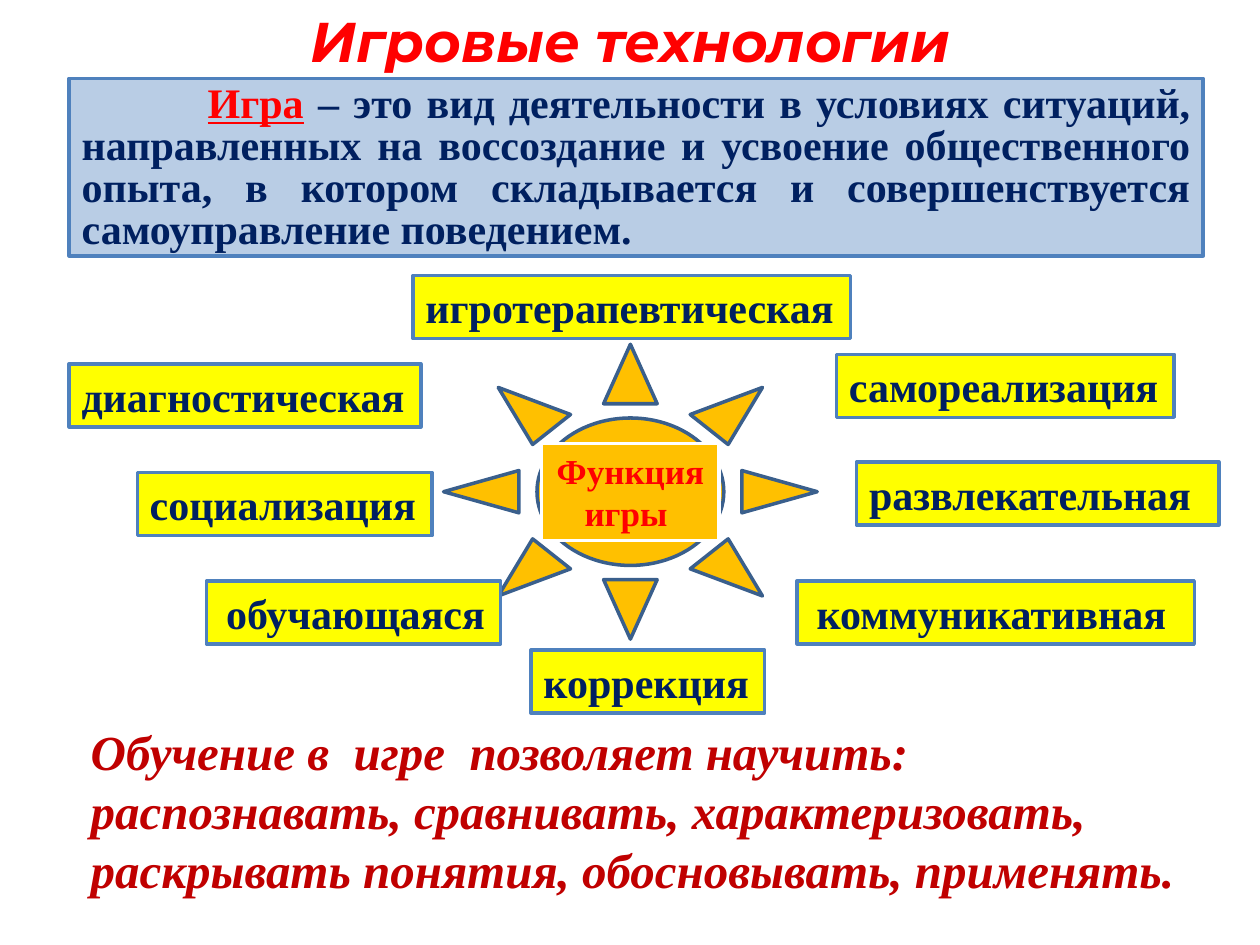
from pptx import Presentation
from pptx import util as u
from pptx.dml.color import RGBColor
from pptx.enum import shapes, text

RED = RGBColor(0xFF, 0x00, 0x00)
DARK = RGBColor(0xC0, 0x00, 0x00)
NAVY = RGBColor(0x00, 0x20, 0x60)
BLACK = RGBColor(0x00, 0x00, 0x00)
WHITE = RGBColor(0xFF, 0xFF, 0xFF)
SKY = RGBColor(0xB9, 0xCD, 0xE5)
BLUE = RGBColor(0x4F, 0x81, 0xBD)
STEEL = RGBColor(0x3A, 0x5F, 0x8C)
LEMON = RGBColor(0xFF, 0xFF, 0x00)
GOLD = RGBColor(0xFF, 0xC0, 0x00)
SERIF = "Times New Roman"
TALL = 36

TITLE = "Игровые технологии"
TERM = "Игра"
MEANING = ("– это вид деятельности в условиях ситуаций, направленных на воссоздание "
           "и усвоение общественного опыта, в котором складывается и "
           "совершенствуется самоуправление поведением.")
CORE = ["Функция ", "игры "]
GOAL = ("Обучение в  игре  позволяет научить: распознавать, сравнивать, "
        "характеризовать, раскрывать понятия, обосновывать, применять.")
ROLES = [
    ("социализация", 78.5, 270, 168.5),
    (" коммуникативная", 455.5, 332, 227),
    ("самореализация", 478, 202.5, 193),
    ("игротерапевтическая", 236, 157.5, 250),
    ("диагностическая", 39.5, 208, 201),
    ("коррекция", 303.5, 371.5, 133.5),
    ("развлекательная", 489.5, 264, 207),
    (" обучающаяся", 118, 332, 168),
]


def place(item, left, top, wide, high):
    item.left, item.top = u.Pt(left), u.Pt(top)
    item.width, item.height = u.Pt(wide), u.Pt(high)


def paint(item, fill, line):
    item.fill.solid()
    item.fill.fore_color.rgb = fill
    item.line.color.rgb = line
    item.line.width = u.Pt(2)


def frame(item, anchor=text.MSO_ANCHOR.TOP):
    body = item.text_frame
    body.word_wrap = True
    body.auto_size = text.MSO_AUTO_SIZE.NONE
    body.vertical_anchor = anchor
    return body


def write(para, words, size, color, face=SERIF, bold=True, slant=False, under=False):
    run = para.add_run()
    run.text = words
    font = run.font
    font.name, font.size = face, u.Pt(size)
    font.bold, font.italic, font.underline = bold, slant, under
    font.color.rgb = color


def shape(kind, box, fill, line):
    item = slide.shapes.add_shape(kind, *map(u.Pt, box))
    item.shadow.inherit = False
    paint(item, fill, line)
    return item


deck = Presentation()
deck.slide_width, deck.slide_height = u.Pt(720), u.Pt(540)
slide = deck.slides.add_slide(deck.slide_layouts[1])

title = slide.shapes.title
place(title, 163.5, 0, 394, 46)
para = frame(title).paragraphs[0]
para.alignment = text.PP_ALIGN.CENTER
write(para, TITLE, 32, RED, "Montserrat", slant=True)

lead = slide.placeholders[1]
place(lead, 39.5, 44.75, 648, 101.5)
paint(lead, SKY, BLUE)
para = frame(lead).paragraphs[0]
para.alignment = text.PP_ALIGN.JUSTIFY
para.line_spacing = u.Pt(24)
para.space_before = u.Pt(4.8)
props = para._p.get_or_add_pPr()
props.set("marL", "0")
props.set("indent", str(u.Pt(72)))
props.append(props.makeelement(
    "{http://schemas.openxmlformats.org/drawingml/2006/main}buNone", {}))
write(para, TERM, 24, RED, under=True)
write(para, " ", 24, RED)
write(para, MEANING, 24, NAVY)

shape(shapes.MSO_SHAPE.SUN, (253.5, 196.75, 213.5, 168.5), GOLD, STEEL)
core = shape(shapes.MSO_SHAPE.RECTANGLE, (309.5, 253.5, 101.5, 55.5), GOLD, WHITE)
body = frame(core)
for spot, words in enumerate(CORE):
    para = body.add_paragraph() if spot else body.paragraphs[0]
    para.alignment = text.PP_ALIGN.CENTER
    write(para, words, 20, RED)

for words, left, top, wide in ROLES:
    role = shape(shapes.MSO_SHAPE.RECTANGLE, (left, top, wide, TALL), LEMON, BLUE)
    para = frame(role).paragraphs[0]
    para.alignment = text.PP_ALIGN.LEFT
    if words.startswith(" "):
        write(para, " ", 18, BLACK, "Calibri", bold=False)
    write(para, words.strip(), 24, NAVY)

goal = slide.shapes.add_textbox(*map(u.Pt, (44.75, 409, 658, 131)))
write(frame(goal).paragraphs[0], GOAL, 28, DARK, slant=True)

deck.save("out.pptx")
